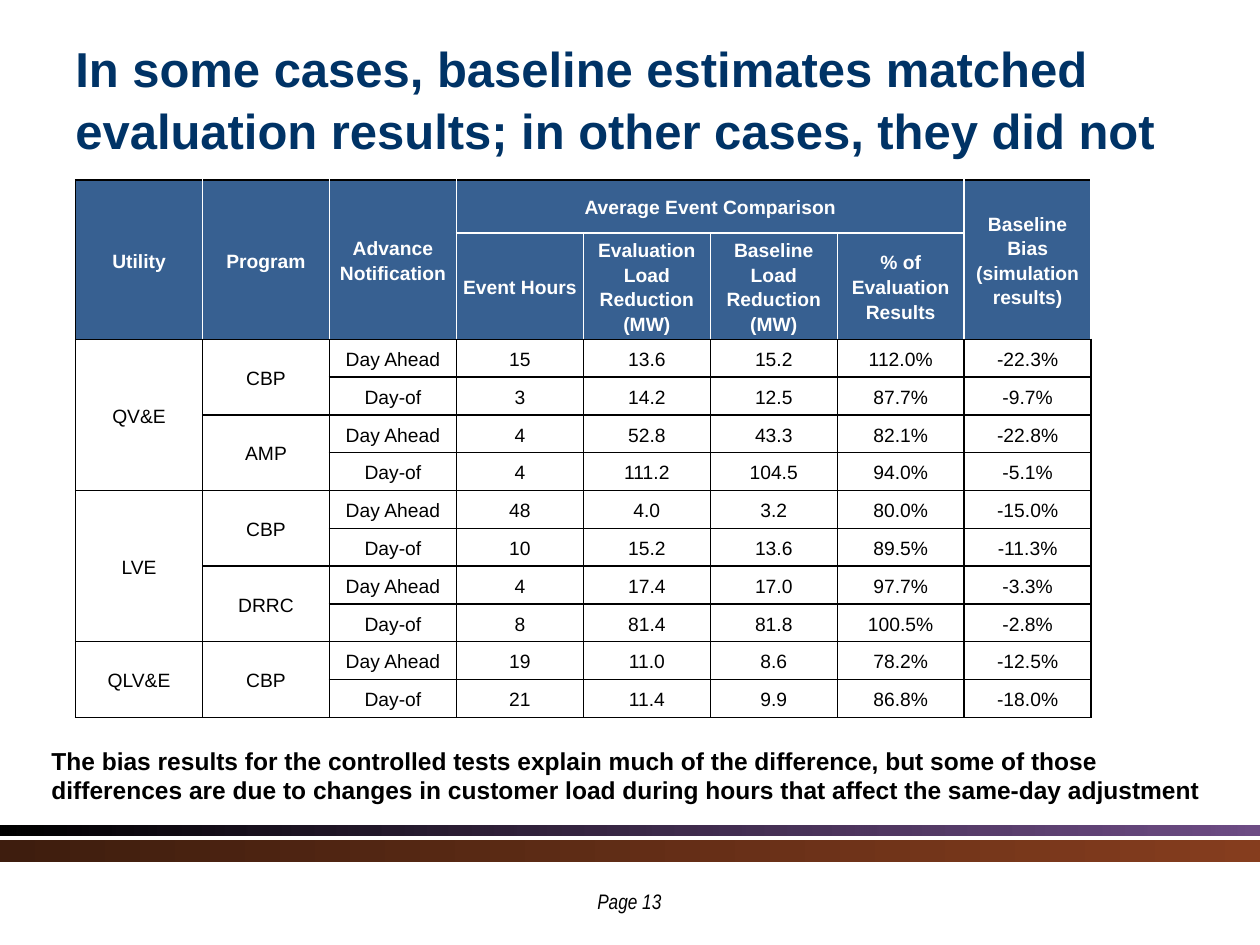
import pptx
import pptx.util
import pptx.dml.color
import pptx.enum.shapes
import pptx.enum.text
import pptx.oxml.ns
import lxml.etree

Inches, Pt = pptx.util.Inches, pptx.util.Pt
MIDDLE = pptx.enum.text.MSO_ANCHOR.MIDDLE
CENTER = pptx.enum.text.PP_ALIGN.CENTER
qn = pptx.oxml.ns.qn


def color(value):
    return pptx.dml.color.RGBColor.from_string(value)


def add_text(slide, box, text, size, ink="000000", name="Arial", bold=True):
    frame = slide.shapes.add_textbox(*[Inches(v) for v in box]).text_frame
    frame.word_wrap = True
    line = frame.paragraphs[0]
    line.text = text
    line.font.size = Pt(size)
    line.font.name = name
    line.font.bold = bold
    line.font.color.rgb = color(ink)
    return frame


deck = pptx.Presentation()
deck.slide_width, deck.slide_height = Inches(10), Inches(7.5)
slide = deck.slides.add_slide(deck.slide_layouts[6])

# Footer bands: top, height, gradient start, gradient end, end opacity in percent
for top, height, start, end, opacity in [
    (6.55, 0.08, "000000", "542D6F", 85),
    (6.67, 0.17, "3E1D0E", "853D1E", 100),
]:
    band = slide.shapes.add_shape(
        pptx.enum.shapes.MSO_SHAPE.RECTANGLE, 0, Inches(top), Inches(10), Inches(height))
    band.shadow.inherit = False
    band.line.fill.background()
    band.fill.gradient()
    band.fill.gradient_angle = 0
    for stop, position, tint in zip(band.fill.gradient_stops, (0, 1), (start, end)):
        stop.position = position
        stop.color.rgb = color(tint)
    end_color = list(band._element.spPr.iter(qn("a:srgbClr")))[-1]
    lxml.etree.SubElement(end_color, qn("a:alpha"), val=str(opacity * 1000))

# Title
title = add_text(
    slide, (0.5, 0.3, 9, 0.95),
    "In some cases, baseline estimates matched evaluation results; "
    "in other cases, they did not", 28, "003366")
title.vertical_anchor = MIDDLE
title.paragraphs[0].line_spacing = 1.05

# Comparison table
HEADER_ROWS = 2
rows = [
    ["Utility", "Program", "Advance Notification", "Average Event Comparison", "", "", "",
     "Baseline Bias (simulation results)"],
    ["", "", "", "Event Hours", "Evaluation Load Reduction (MW)",
     "Baseline Load Reduction (MW)", "% of Evaluation Results", ""],
    ["QV&E", "CBP", "Day Ahead", "15", "13.6", "15.2", "112.0%", "-22.3%"],
    ["", "", "Day-of", "3", "14.2", "12.5", "87.7%", "-9.7%"],
    ["", "AMP", "Day Ahead", "4", "52.8", "43.3", "82.1%", "-22.8%"],
    ["", "", "Day-of", "4", "111.2", "104.5", "94.0%", "-5.1%"],
    ["LVE", "CBP", "Day Ahead", "48", "4.0", "3.2", "80.0%", "-15.0%"],
    ["", "", "Day-of", "10", "15.2", "13.6", "89.5%", "-11.3%"],
    ["", "DRRC", "Day Ahead", "4", "17.4", "17.0", "97.7%", "-3.3%"],
    ["", "", "Day-of", "8", "81.4", "81.8", "100.5%", "-2.8%"],
    ["QLV&E", "CBP", "Day Ahead", "19", "11.0", "8.6", "78.2%", "-12.5%"],
    ["", "", "Day-of", "21", "11.4", "9.9", "86.8%", "-18.0%"],
]
comparison = slide.shapes.add_table(
    len(rows), len(rows[0]), Inches(0.6), Inches(1.43), Inches(8.06), Inches(4.29)).table
for column in comparison.columns:
    column.width = Inches(8.06 / len(rows[0]))
for row, height in zip(comparison.rows, [0.42, 0.68] + [0.3] * 10):
    row.height = Inches(height)

for r, values in enumerate(rows):
    header = r < HEADER_ROWS
    for c, value in enumerate(values):
        cell = comparison.cell(r, c)
        cell.margin_left = cell.margin_right = Inches(0.05)
        cell.margin_top = cell.margin_bottom = 0
        cell.vertical_anchor = MIDDLE

        # Cell borders: white inside the header, black elsewhere
        grouped = 3 <= c <= 6
        white_edges = {
            "L": header and c > 0,
            "R": header,
            "T": r == 1 and grouped,
            "B": r == 0 and grouped,
        }
        for side, white in white_edges.items():
            edge = lxml.etree.SubElement(
                cell._tc.get_or_add_tcPr(), qn("a:ln" + side), w=str(Pt(1)))
            paint = lxml.etree.SubElement(edge, qn("a:solidFill"))
            lxml.etree.SubElement(
                paint, qn("a:srgbClr"), val="FFFFFF" if white else "000000")

        if header:
            cell.fill.solid()
            cell.fill.fore_color.rgb = color("376091")
        else:
            cell.fill.background()

        entry = cell.text_frame.paragraphs[0]
        entry.text = value
        entry.alignment = CENTER
        entry.line_spacing = 1.15
        if c == 3 and not header:
            entry.space_before = entry.space_after = Pt(3)
        entry.font.size = Pt(11)
        entry.font.name = "Arial"
        entry.font.bold = header
        entry.font.color.rgb = color("FFFFFF" if header else "000000")

# Merged cells: first row, first column, last row, last column
merges = [(0, c, 1, c) for c in (0, 1, 2, 7)] + [(0, 3, 0, 6)]
merges += [(2, 0, 5, 0), (6, 0, 9, 0), (10, 0, 11, 0)]
merges += [(r, 1, r + 1, 1) for r in range(2, 12, 2)]
for top, left, bottom, right in merges:
    comparison.cell(top, left).merge(comparison.cell(bottom, right))

# Page number
page = add_text(slide, (3.93, 7, 2.13, 0.22), "Page 13", 12, name="Arial Narrow", bold=False)
page.paragraphs[0].alignment = CENTER
page.paragraphs[0].font.italic = True

# Takeaway
add_text(
    slide, (0.31, 5.87, 9.38, 0.58),
    "The bias results for the controlled tests explain much of the difference, but some of "
    "those differences are due to changes in customer load during hours that affect the "
    "same-day adjustment", 14)

deck.save("out.pptx")
